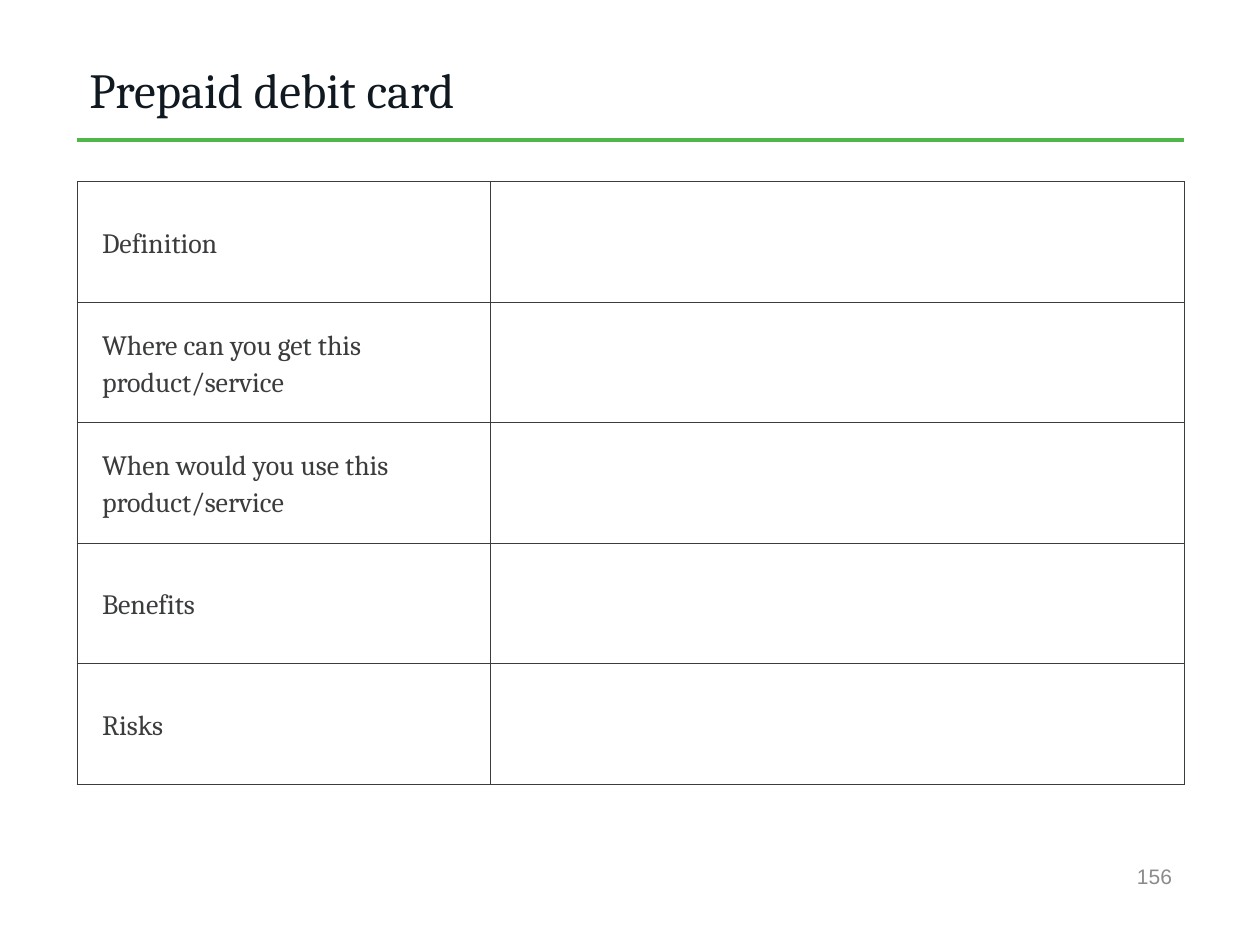
"""Build the prepaid debit card worksheet slide."""
import pptx
import pptx.dml.color
import pptx.enum.shapes
import pptx.enum.text
import pptx.oxml
import pptx.oxml.ns
import pptx.util
from pptx.util import Inches

TITLE = "Prepaid debit card"
PAGE_NUMBER = "156"
PROMPTS = [
    "Definition",
    "Where can you get this product/service",
    "When would you use this product/service",
    "Benefits",
    "Risks",
]
LEFT, WIDTH, RULE_Y = 0.61, 8.79, 1.11
TABLE_TOP, TABLE_HEIGHT = 1.44, 4.78
COLUMN_WIDTHS = [3.28, 5.51]
BORDER = "3A3C3E"
MIDDLE = pptx.enum.text.MSO_ANCHOR.MIDDLE
ALIGN = pptx.enum.text.PP_ALIGN


def color(value):
    return pptx.dml.color.RGBColor.from_string(value)


def write(frame, text, name, size, fill, align=ALIGN.LEFT):
    frame.word_wrap = True
    frame.vertical_anchor = MIDDLE
    para = frame.paragraphs[0]
    para.text = text
    para.alignment = align
    para.font.name = name
    para.font.size = pptx.util.Pt(size)
    para.font.color.rgb = color(fill)
    return para


def add_borders(cell):
    properties = cell._tc.get_or_add_tcPr()
    for side in ("lnL", "lnR", "lnT", "lnB"):
        properties.append(pptx.oxml.parse_xml(
            f'<a:{side} {pptx.oxml.ns.nsdecls("a")} w="{pptx.util.Pt(0.25)}">'
            f'<a:solidFill><a:srgbClr val="{BORDER}"/></a:solidFill></a:{side}>'))


def add_title(page):
    title = page.shapes.title
    title.left, title.top = Inches(LEFT), Inches(0.3)
    title.width, title.height = Inches(WIDTH), Inches(RULE_Y - 0.3)
    write(title.text_frame, TITLE, "Cambria", 28, "101820")


def add_rule(page):
    rule = page.shapes.add_connector(
        pptx.enum.shapes.MSO_CONNECTOR.STRAIGHT,
        Inches(LEFT), Inches(RULE_Y), Inches(LEFT + WIDTH), Inches(RULE_Y))
    rule.line.color.rgb = color("50B748")
    rule.line.width = pptx.util.Pt(2)
    rule._element.spPr.append(
        pptx.oxml.parse_xml(f'<a:effectLst {pptx.oxml.ns.nsdecls("a")}/>'))


def add_worksheet(page):
    table = page.shapes.add_table(
        len(PROMPTS), len(COLUMN_WIDTHS), Inches(LEFT), Inches(TABLE_TOP),
        Inches(WIDTH), Inches(TABLE_HEIGHT)).table
    table.first_row = table.horz_banding = False
    for column, width in zip(table.columns, COLUMN_WIDTHS):
        column.width = Inches(width)
    for cell in table.iter_cells():
        add_borders(cell)
        cell.fill.background()
    for row, prompt in enumerate(PROMPTS):
        cell = table.cell(row, 0)
        cell.margin_left = Inches(0.2)
        cell.vertical_anchor = MIDDLE
        para = write(cell.text_frame, prompt, "Cambria", 16, "3B3C3E")
        para.line_spacing = 1.15


def add_page_number(page):
    box = page.shapes.add_textbox(
        Inches(6.23), Inches(6.75), Inches(3.17), Inches(0.4))
    write(box.text_frame, PAGE_NUMBER, "Arial", 12, "8A8B8C", ALIGN.RIGHT)


def main():
    deck = pptx.Presentation()
    deck.slide_width, deck.slide_height = Inches(10), Inches(7.5)
    page = deck.slides.add_slide(deck.slide_layouts[5])
    add_rule(page)
    add_title(page)
    add_page_number(page)
    add_worksheet(page)
    deck.save("out.pptx")


if __name__ == "__main__":
    main()
